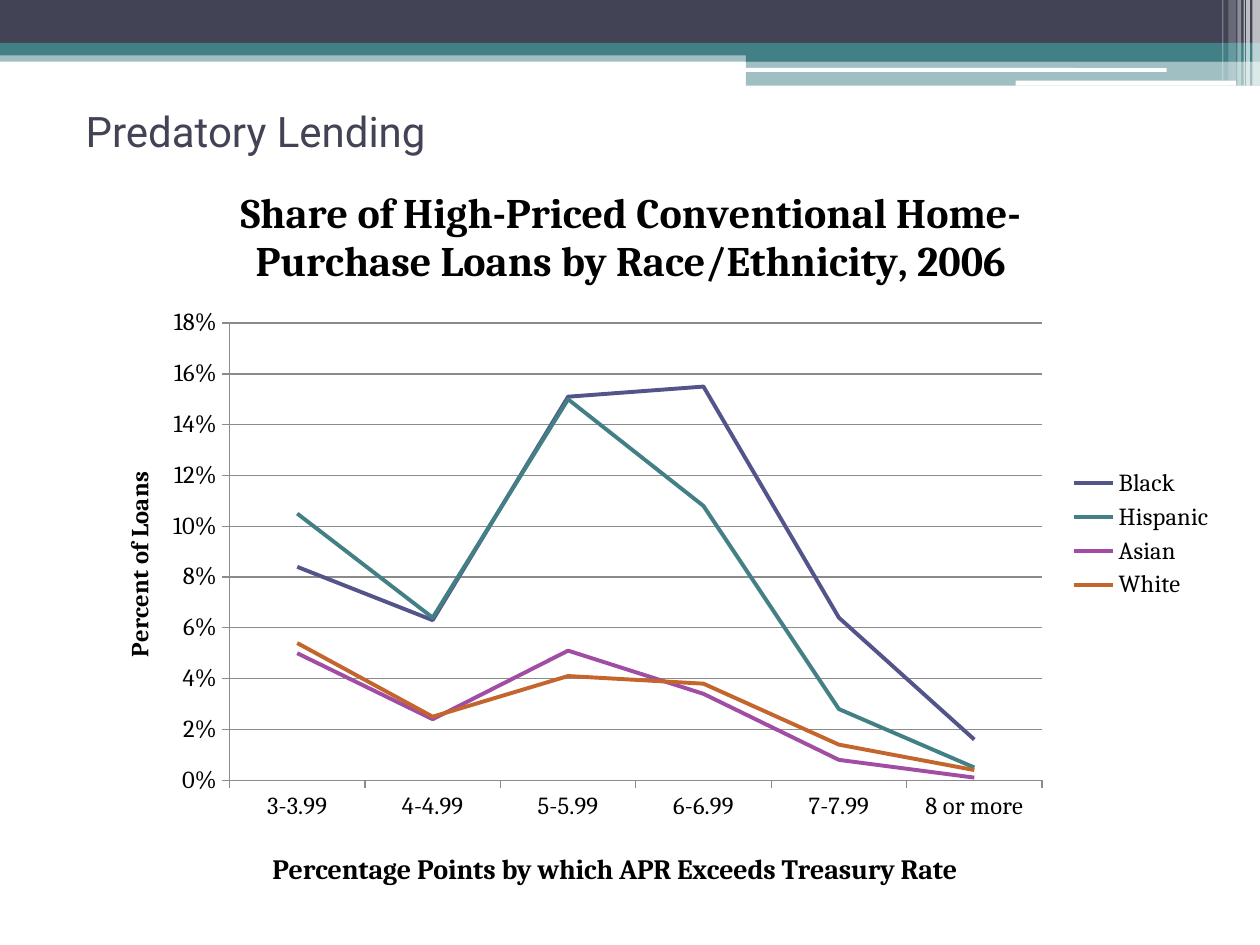
from dataclasses import dataclass

from lxml.etree import SubElement
from pptx import Presentation
from pptx.chart.data import CategoryChartData
from pptx.dml.color import RGBColor as RGB
from pptx.enum.chart import XL_CHART_TYPE as ChartType
from pptx.enum.chart import XL_LEGEND_POSITION as LegendPos
from pptx.enum.chart import XL_MARKER_STYLE as Marker
from pptx.enum.chart import XL_TICK_MARK as Tick
from pptx.enum.shapes import MSO_SHAPE as Shape
from pptx.enum.text import MSO_ANCHOR as Anchor
from pptx.oxml import parse_xml
from pptx.oxml.ns import nsdecls, qn
from pptx.util import Inches, Pt


@dataclass(frozen=True)
class Theme:
    navy: str = "424456"
    teal: str = "438086"
    white: str = "FFFFFF"
    black: str = "000000"
    grid: str = "8B8B8B"
    heading_font: str = "Roboto"
    chart_font: str = "Cambria"
    heading: int = 24
    x_title: int = 16
    label: int = 14
    base: int = 10
    line: float = 2.25
    thin: float = 0.75


@dataclass(frozen=True)
class Bar:
    x: float
    y: float
    w: float
    h: float
    color: str
    alpha: int = 100
    shape: Shape = Shape.RECTANGLE


@dataclass(frozen=True)
class LoanSeries:
    name: str
    color: str
    values: tuple[float, ...]


T = Theme()
ROUND = Shape.ROUNDED_RECTANGLE

BARS = [
    Bar(0, 0.4, 10, 0.09, T.teal, 50),
    Bar(0, 0, 10, 0.34, T.navy),
    Bar(0, 0.34, 10, 0.1, T.teal),
    Bar(5.92, 0.39, 4.08, 0.1, T.teal),
    Bar(5.92, 0.48, 4.08, 0.2, T.teal, 50),
    Bar(5.91, 0.54, 3.35, 0.03, T.white, shape=ROUND),
    Bar(8.06, 0.64, 1.75, 0.04, T.white, shape=ROUND),
    Bar(9.94, 0, 0.06, 0.68, T.white, 65),
    Bar(9.89, 0, 0.03, 0.68, T.white, 65),
    Bar(9.87, 0, 0.01, 0.68, T.white, 60),
    Bar(9.82, 0, 0.03, 0.68, T.white, 40),
    Bar(9.75, 0, 0.06, 0.64, T.white, 20),
    Bar(9.7, 0, 0.01, 0.64, T.white, 30),
]

RATE_BANDS = ["3-3.99", "4-4.99", "5-5.99", "6-6.99", "7-7.99", "8 or more"]
LOANS = [
    LoanSeries("Black", "53548A", (0.084, 0.063, 0.151, 0.155, 0.064, 0.016)),
    LoanSeries("Hispanic", "438086", (0.105, 0.064, 0.15, 0.108, 0.028, 0.005)),
    LoanSeries("Asian", "A04DA3", (0.05, 0.024, 0.051, 0.034, 0.008, 0.001)),
    LoanSeries("White", "C4652D", (0.054, 0.025, 0.041, 0.038, 0.014, 0.004)),
]


def format_font(font, *, size: float, color: str = T.black,
                name: str = T.chart_font, bold: bool = False) -> None:
    font.size, font.name, font.bold = Pt(size), name, bold
    font.color.rgb = RGB.from_string(color)


def put_text(tf, text: str, **fmt) -> None:
    r = tf.paragraphs[0].add_run()
    r.text = text
    format_font(r.font, **fmt)


def draw_bar(s, bar: Bar) -> None:
    sp = s.shapes.add_shape(bar.shape, *map(Inches, (bar.x, bar.y, bar.w, bar.h)))
    sp.shadow.inherit = False
    sp.line.fill.background()
    sp.fill.solid()
    sp.fill.fore_color.rgb = RGB.from_string(bar.color)
    if bar.alpha < 100:
        clr = sp.fill._xPr.find(".//" + qn("a:srgbClr"))
        SubElement(clr, qn("a:alpha")).set("val", str(bar.alpha * 1000))


def set_layout(parent, index: int, **fractions: float) -> None:
    for old in parent.findall(qn("c:layout")):
        parent.remove(old)
    modes = '<c:xMode val="edge"/><c:yMode val="edge"/>'
    if "w" in fractions:
        modes = '<c:layoutTarget val="inner"/>' + modes
    sizes = "".join(f'<c:{k} val="{v}"/>' for k, v in fractions.items())
    parent.insert(index, parse_xml(
        f'<c:layout {nsdecls("c")}><c:manualLayout>{modes}{sizes}'
        "</c:manualLayout></c:layout>"))


def put_chart_title(title, text: str, size: float, x: float, y: float) -> None:
    put_text(title.text_frame, text, size=size, bold=True)
    set_layout(title._element, 1, x=x, y=y)


def format_line(line, color: str, width: float) -> None:
    line.color.rgb = RGB.from_string(color)
    line.width = Pt(width)


def draw_chart(s) -> None:
    data = CategoryChartData(number_format="0%")
    data.categories = RATE_BANDS
    for loan in LOANS:
        data.add_series(loan.name, loan.values)
    box = map(Inches, (0.67, 1.29, 9.07, 5.9))
    chart = s.shapes.add_chart(ChartType.LINE, *box, data).chart
    format_font(chart.font, size=T.base)

    chart.has_title = True
    put_chart_title(
        chart.chart_title,
        "Share of High-Priced Conventional Home-Purchase Loans by Race/Ethnicity, 2006",
        T.heading, 0.13, 0.02)
    x_axis, y_axis = chart.category_axis, chart.value_axis
    put_chart_title(x_axis.axis_title,
                    "Percentage Points by which APR Exceeds Treasury Rate",
                    T.x_title, 0.16, 0.92)
    put_chart_title(y_axis.axis_title, "Percent of Loans", T.label, 0.03, 0.41)
    for axis in (x_axis, y_axis):
        axis.major_tick_mark, axis.minor_tick_mark = Tick.OUTSIDE, Tick.NONE
        format_font(axis.tick_labels.font, size=T.label)
        format_line(axis.format.line, T.grid, T.thin)
    y_axis.minimum_scale, y_axis.maximum_scale, y_axis.major_unit = 0, 0.18, 0.02
    y_axis.tick_labels.number_format = "0%"
    y_axis.tick_labels.number_format_is_linked = False
    y_axis.has_major_gridlines = True
    format_line(y_axis.major_gridlines.format.line, T.grid, T.thin)

    chart.has_legend = True
    chart.legend.position = LegendPos.RIGHT
    chart.legend.include_in_layout = False
    format_font(chart.legend.font, size=T.label)

    plot = chart.plots[0]
    plot.vary_by_categories = False
    set_layout(plot._element.getparent(), 0, x=0.127, y=0.216, w=0.711, h=0.615)
    for series, loan in zip(plot.series, LOANS):
        series.smooth = False
        series.marker.style = Marker.NONE
        format_line(series.format.line, loan.color, T.line)


def main() -> None:
    prs = Presentation()
    prs.slide_width, prs.slide_height = Inches(10), Inches(7.5)
    s = prs.slides.add_slide(prs.slide_layouts[6])
    for bar in BARS:
        draw_bar(s, bar)
    tf = s.shapes.add_textbox(*map(Inches, (0.5, 0.75, 9, 0.58))).text_frame
    tf.word_wrap = True
    tf.vertical_anchor = Anchor.MIDDLE
    tf.margin_left = Inches(0.18)
    put_text(tf, "Predatory Lending", size=T.heading, color=T.navy, name=T.heading_font)
    draw_chart(s)
    prs.save("out.pptx")


if __name__ == "__main__":
    main()
